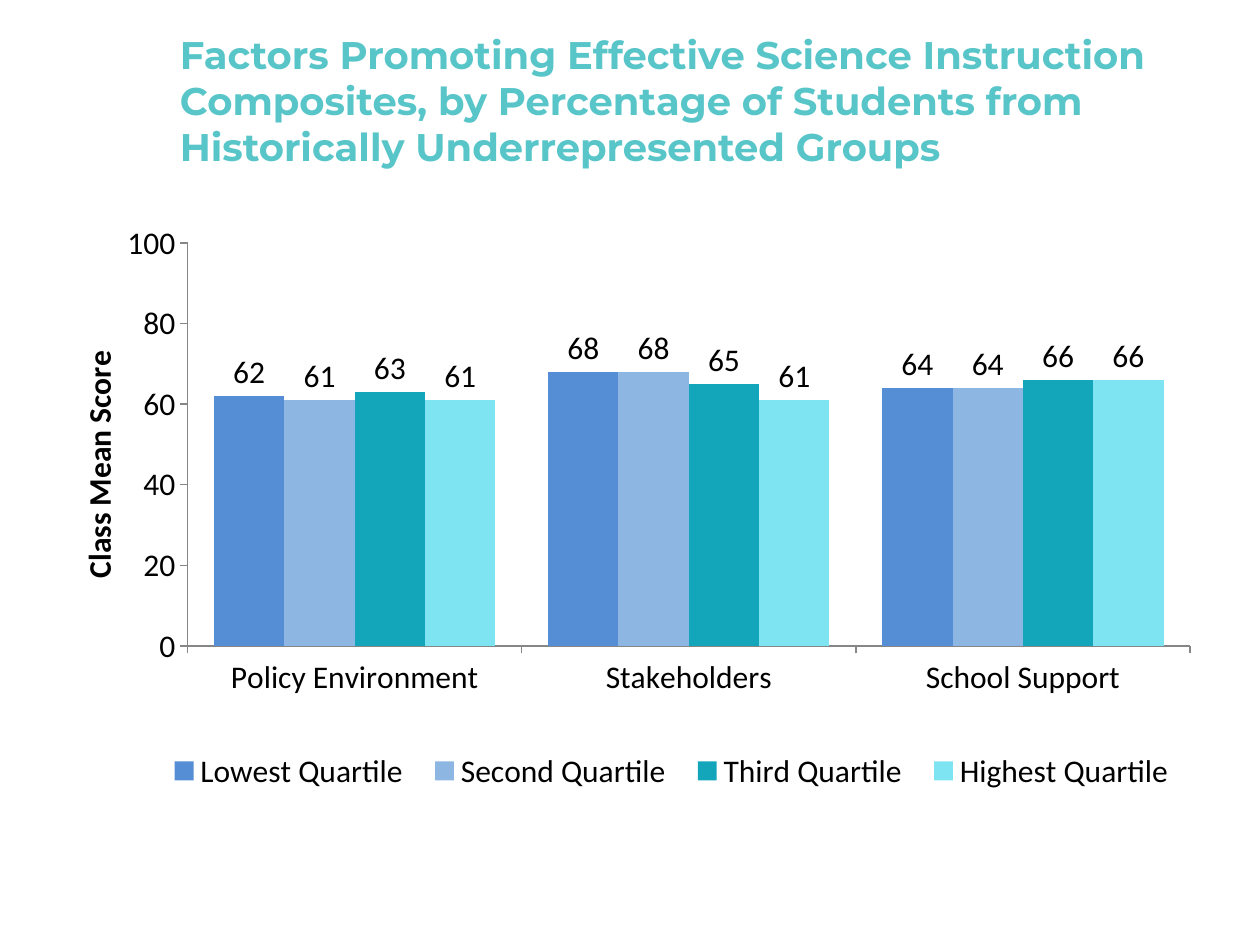
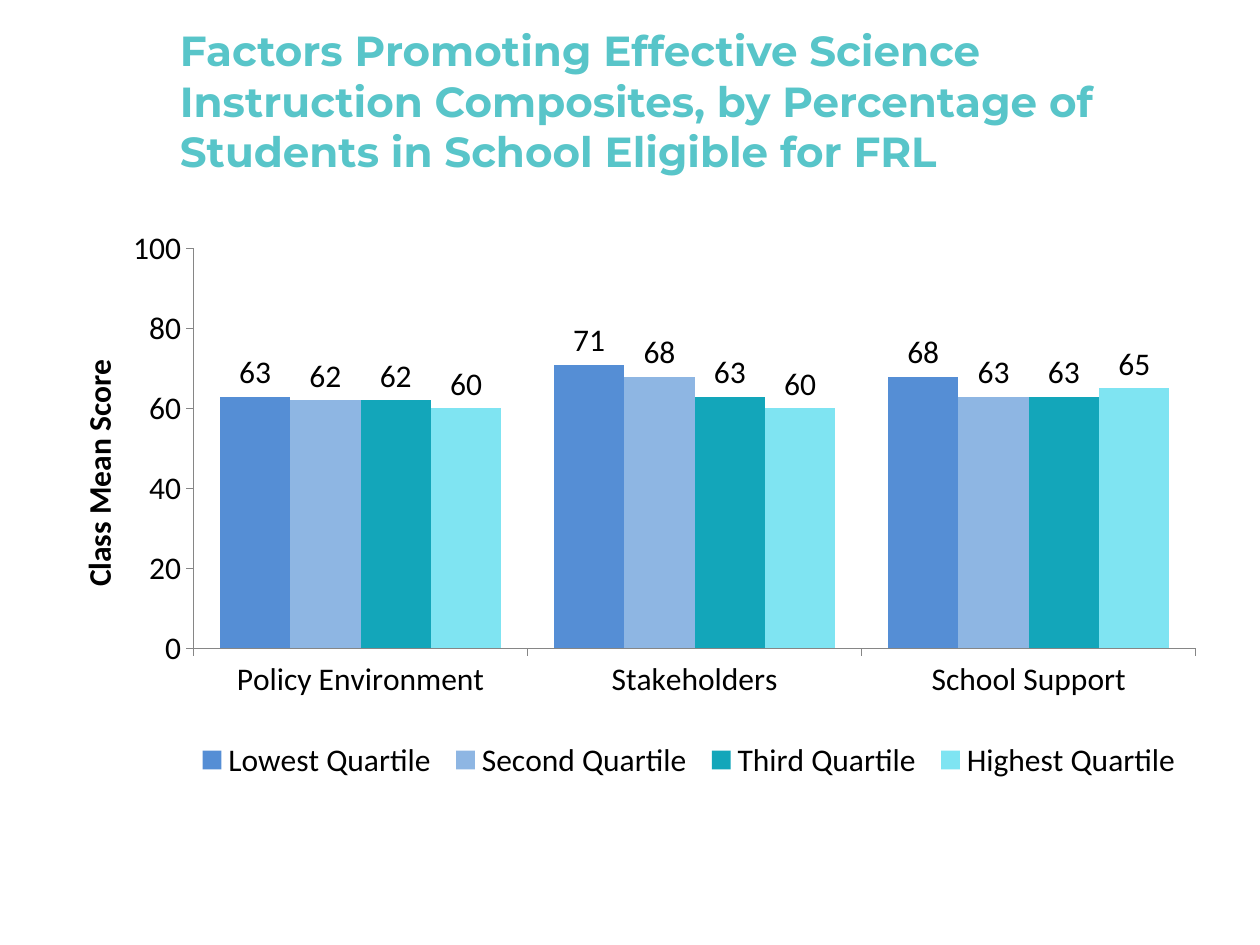
from dataclasses import dataclass

from lxml.etree import SubElement
from pptx import Presentation
from pptx.chart.axis import CategoryAxis, ValueAxis
from pptx.chart.data import CategoryChartData
from pptx.dml.color import RGBColor
from pptx.enum.chart import (
    XL_CHART_TYPE as ChartType,
    XL_LABEL_POSITION as LabelPos,
    XL_LEGEND_POSITION as LegendPos,
    XL_TICK_MARK as Tick,
)
from pptx.enum.text import MSO_ANCHOR as Anchor
from pptx.oxml.ns import qn
from pptx.slide import Slide
from pptx.util import Inches, Pt


@dataclass(frozen=True)
class Theme:
    title_color: str = "58C5C9"
    text_color: str = "000000"
    axis_color: str = "868686"
    quartile_colors: tuple[str, ...] = ("558ED5", "8EB6E3", "13A6BA", "7FE4F2")
    title_font: str = "Montserrat"
    chart_font: str = "Calibri"
    chart_size: int = 18
    axis_width: float = 0.75


@dataclass(frozen=True)
class QuartileSlide:
    """One chart slide; layouts are fractions of the chart's size."""
    title: str
    title_size: int
    title_width: float
    chart_top: float
    scores: tuple[tuple[int, ...], ...]
    plot_layout: tuple[float, ...]
    legend_layout: tuple[float, ...]
    axis_title_layout: tuple[float, ...]


THEME = Theme()
COMPOSITES = ("Policy Environment", "Stakeholders", "School Support")
QUARTILES = ("Lowest Quartile", "Second Quartile", "Third Quartile", "Highest Quartile")
CHART_LEFT, CHART_WIDTH, CHART_BOTTOM = 0.38, 9.25, 6.5
TITLE_LEFT, TITLE_TOP, TITLE_HEIGHT = 1.33, 0.17, 1.25

SLIDES = (
    QuartileSlide(
        title="Factors Promoting Effective Science Instruction Composites, "
              "by Percentage of Students from Historically Underrepresented Groups",
        title_size=22,
        title_width=8.5,
        chart_top=1.42,
        scores=((62, 68, 64), (61, 68, 64), (63, 65, 66), (61, 61, 66)),
        plot_layout=(0.12, 0.1, 0.86, 0.63),
        legend_layout=(0.09, 0.88, 0.89, 0.09),
        axis_title_layout=(0.02, 0.26),
    ),
    QuartileSlide(
        title="Factors Promoting Effective Science Instruction Composites, "
              "by Percentage of Students in School Eligible for FRL",
        title_size=24,
        title_width=8.17,
        chart_top=1.58,
        scores=((63, 71, 68), (62, 68, 63), (62, 63, 63), (60, 60, 65)),
        plot_layout=(0.125, 0.08, 0.86, 0.645),
        legend_layout=(0.12, 0.86, 0.86, 0.09),
        axis_title_layout=(0.02, 0.25),
    ),
)


def rgb(color: str) -> RGBColor:
    return RGBColor.from_string(color)


def place(element, fractions: tuple[float, ...], index: int, inner: bool = False) -> None:
    """Give a chart part a manual layout, as its child number index."""
    for old in element.findall(qn("c:layout")):
        element.remove(old)
    layout = SubElement(element, qn("c:layout"))
    manual = SubElement(layout, qn("c:manualLayout"))
    if inner:
        SubElement(manual, qn("c:layoutTarget")).set("val", "inner")
    for mode in ("xMode", "yMode"):
        SubElement(manual, qn(f"c:{mode}")).set("val", "edge")
    for side, value in zip("xywh", fractions):
        SubElement(manual, qn(f"c:{side}")).set("val", str(value))
    element.insert(index, layout)


def add_title(s: Slide, spec_: QuartileSlide) -> None:
    box = s.shapes.add_textbox(Inches(TITLE_LEFT), Inches(TITLE_TOP),
                               Inches(spec_.title_width), Inches(TITLE_HEIGHT))
    tf = box.text_frame
    tf.word_wrap = True
    tf.vertical_anchor = Anchor.MIDDLE
    tf.text = spec_.title
    font = tf.paragraphs[0].runs[0].font
    font.name, font.size, font.bold = THEME.title_font, Pt(spec_.title_size), True
    font.color.rgb = rgb(THEME.title_color)


def style_axis(axis: CategoryAxis | ValueAxis) -> None:
    axis.has_major_gridlines = False
    axis.major_tick_mark = Tick.OUTSIDE
    axis.minor_tick_mark = Tick.NONE
    axis.format.line.color.rgb = rgb(THEME.axis_color)
    axis.format.line.width = Pt(THEME.axis_width)


def style_font(font) -> None:
    font.name, font.size = THEME.chart_font, Pt(THEME.chart_size)
    font.color.rgb = rgb(THEME.text_color)


def add_score_chart(s: Slide, spec_: QuartileSlide) -> None:
    data = CategoryChartData()
    data.categories = COMPOSITES
    for name, values in zip(QUARTILES, spec_.scores):
        data.add_series(name, values)
    chart = s.shapes.add_chart(
        ChartType.COLUMN_CLUSTERED, Inches(CHART_LEFT), Inches(spec_.chart_top),
        Inches(CHART_WIDTH), Inches(CHART_BOTTOM - spec_.chart_top), data).chart
    style_font(chart.font)
    chart.has_title = False

    plot = chart.plots[0]
    plot.vary_by_categories = False
    plot.gap_width, plot.overlap = 75, 0
    for series, color in zip(plot.series, THEME.quartile_colors):
        series.format.fill.solid()
        series.format.fill.fore_color.rgb = rgb(color)
        labels = series.data_labels
        labels.show_value = True
        labels.position = LabelPos.OUTSIDE_END
        style_font(labels.font)

    style_axis(chart.category_axis)
    scores = chart.value_axis
    style_axis(scores)
    scores.minimum_scale, scores.maximum_scale, scores.major_unit = 0, 100, 20
    scores.axis_title.text_frame.text = "Class Mean Score"
    title_font = scores.axis_title.text_frame.paragraphs[0].runs[0].font
    style_font(title_font)
    title_font.bold = True

    chart.has_legend = True
    chart.legend.position = LegendPos.BOTTOM
    chart.legend.include_in_layout = False
    style_font(chart.legend.font)

    root = chart.element
    place(root.xpath("c:chart/c:plotArea")[0], spec_.plot_layout, 0, inner=True)
    place(root.xpath("c:chart/c:legend")[0], spec_.legend_layout, 1)
    place(root.xpath(".//c:valAx/c:title")[0], spec_.axis_title_layout, 1)


def main() -> None:
    prs = Presentation()
    prs.slide_width, prs.slide_height = Inches(10), Inches(7.5)
    for spec_ in SLIDES:
        s = prs.slides.add_slide(prs.slide_layouts[6])
        add_score_chart(s, spec_)
        add_title(s, spec_)
    prs.save("out.pptx")


if __name__ == "__main__":
    main()
